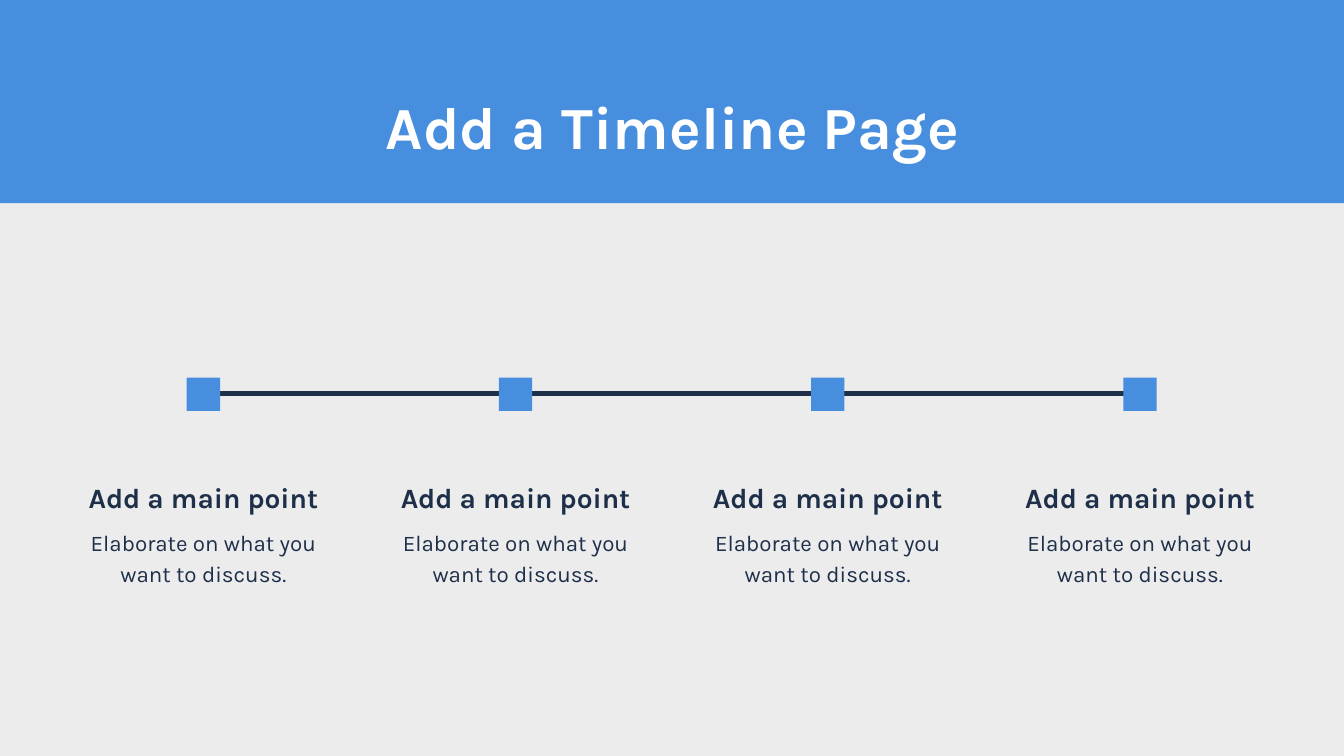
from pptx import Presentation
from pptx.dml.color import RGBColor
from pptx.enum.shapes import MSO_CONNECTOR, MSO_SHAPE
from pptx.enum.text import MSO_AUTO_SIZE, PP_ALIGN
from pptx.oxml.ns import qn
from pptx.util import Cm, Pt
from lxml import etree

RECTANGLE = MSO_SHAPE.RECTANGLE
STRAIGHT = MSO_CONNECTOR.STRAIGHT
CENTER = PP_ALIGN.CENTER
FIT_SHAPE = MSO_AUTO_SIZE.SHAPE_TO_FIT_TEXT

FONT = "Karla"
BLUE, NAVY, WHITE, GRAY = "488EDF", "1E2F49", "FFFFFF", "EDECED"
SLIDE_WIDTH, SLIDE_HEIGHT = 25.4, 14.29
POINT_PITCH = 5.9
TEXT_LEFT, TEXT_WIDTH = 1.42, 4.85
MARKER_LEFT, MARKER_TOP, MARKER_SIZE = 3.53, 7.14, 0.63
LINE_Y = 7.44
POINTS = [("Add a main point", "Elaborate on what you want to discuss.")] * 4


def color(hex_value):
    """Return the colour for a hex string."""
    return RGBColor.from_string(hex_value)


def add_rectangle(slide, left, top, width, height, fill):
    """Add a filled rectangle without an outline."""
    shape = slide.shapes.add_shape(RECTANGLE, Cm(left), Cm(top), Cm(width), Cm(height))
    shape.shadow.inherit = False
    shape.fill.solid()
    shape.fill.fore_color.rgb = color(fill)
    shape.line.fill.background()


def add_line(slide, start, end, y):
    """Add the horizontal timeline."""
    line = slide.shapes.add_connector(STRAIGHT, Cm(start), Cm(y), Cm(end), Cm(y))
    line.line.color.rgb = color(NAVY)
    line.line.width = Pt(3)
    etree.SubElement(line._element.spPr, qn("a:effectLst"))


def add_text(slide, text, left, top, width, height, size, spacing, text_color, bold=False):
    """Add a centred text box without margins."""
    box = slide.shapes.add_textbox(Cm(left), Cm(top), Cm(width), Cm(height))
    frame = box.text_frame
    frame.word_wrap = True
    frame.auto_size = FIT_SHAPE
    frame.margin_left = frame.margin_right = frame.margin_top = frame.margin_bottom = 0
    frame.text = text
    paragraph = frame.paragraphs[0]
    paragraph.alignment = CENTER
    paragraph.line_spacing = spacing
    font = paragraph.runs[0].font
    font.name = FONT
    font.size = Pt(size)
    font.bold = bold
    font.color.rgb = color(text_color)


def add_point(slide, index, heading, detail):
    """Add one timeline marker with its heading and detail."""
    offset = index * POINT_PITCH
    left = TEXT_LEFT + offset
    add_rectangle(slide, MARKER_LEFT + offset, MARKER_TOP, MARKER_SIZE, MARKER_SIZE, BLUE)
    add_text(slide, heading, left, 8.89, TEXT_WIDTH, 0.64, 15, 1.3, NAVY, bold=True)
    add_text(slide, detail, left, 9.93, TEXT_WIDTH, 1.09, 12, 1.15, NAVY)


def main():
    """Build and save the timeline slide."""
    presentation = Presentation()
    presentation.slide_width = Cm(SLIDE_WIDTH)
    presentation.slide_height = Cm(SLIDE_HEIGHT)
    slide = presentation.slides.add_slide(presentation.slide_layouts[6])
    slide.background.fill.solid()
    slide.background.fill.fore_color.rgb = color(GRAY)

    add_rectangle(slide, 0, 0, SLIDE_WIDTH, 3.84, BLUE)
    add_text(slide, "Add a Timeline Page", 4.98, 1.42, 15.47, 1.37, 32, 1.2, WHITE, bold=True)
    line_start = MARKER_LEFT + MARKER_SIZE / 2
    add_line(slide, line_start, line_start + (len(POINTS) - 1) * POINT_PITCH, LINE_Y)
    for index, (heading, detail) in enumerate(POINTS):
        add_point(slide, index, heading, detail)

    presentation.save("out.pptx")


if __name__ == "__main__":
    main()
